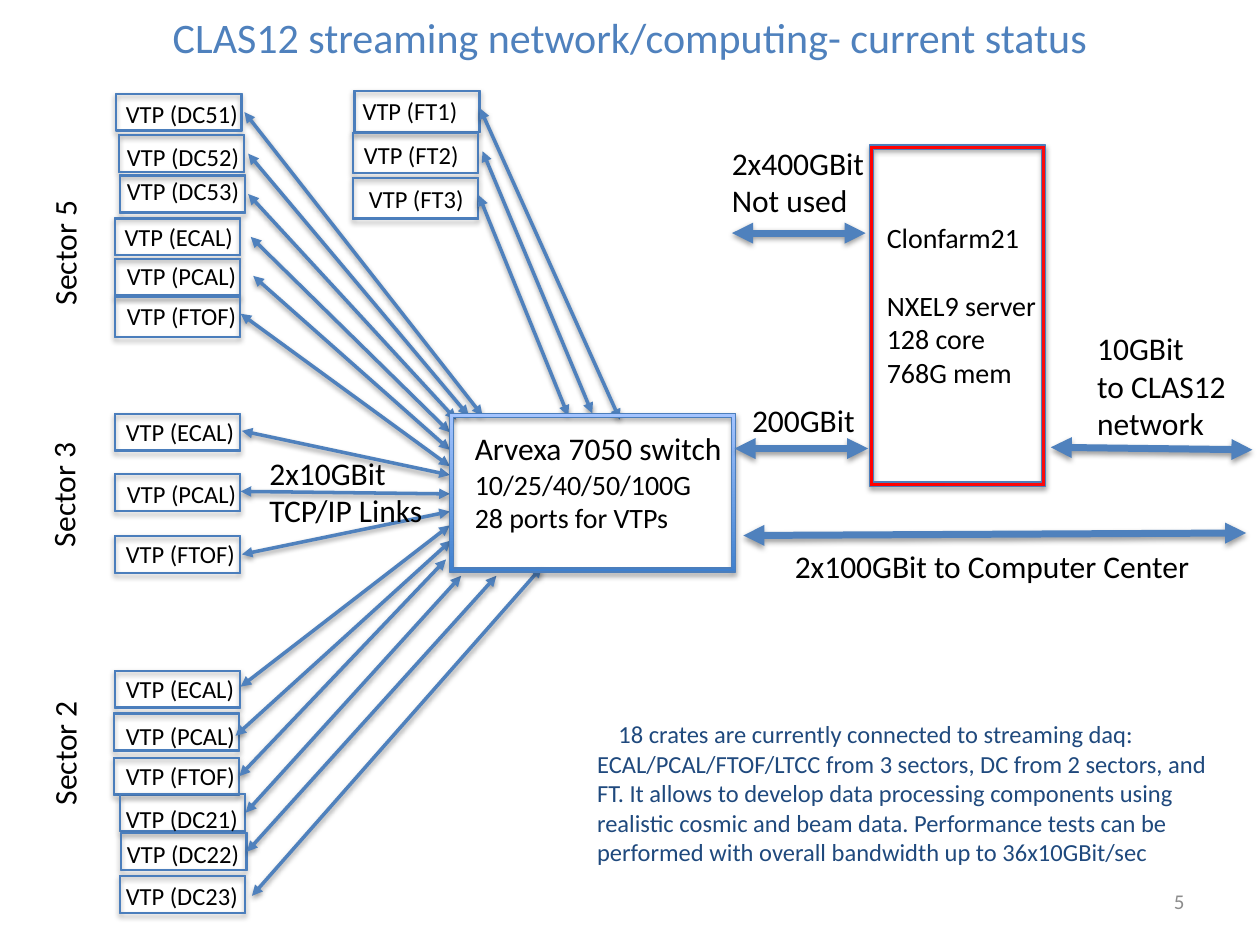
from lxml import etree
from pptx import Presentation
from pptx import util as u
from pptx.dml.color import RGBColor
from pptx.enum import shapes, text
from pptx.oxml import parse_xml
from pptx.oxml.ns import qn

COLORS = {
    "accent": "4F81BD", "outline": "4B7EBC", "deep": "3F80CE", "pale": "A4C4FF",
    "red": "FF0000", "soft_red": "FA0A0D", "black": "000000", "navy": "1F497D",
    "grey": "8C8C8C",
}
A_NS = "http://schemas.openxmlformats.org/drawingml/2006/main"

# label, box (left, top, height), label (left, top), arrow start, arrow end at the switch
CRATES = [
    ("VTP (DC51)", (0.92, 0.74, 0.3), (0.9, 0.74), (1.94, 0.89), (3.83, 3.3)),
    ("VTP (DC52)", (0.94, 1.07, 0.3), (0.91, 1.08), (1.97, 1.22), (3.72, 3.3)),
    ("VTP (DC53)", (0.95, 1.39, 0.3), (0.91, 1.35), (1.97, 1.54), (3.62, 3.33)),
    ("VTP (ECAL)", (0.91, 1.73, 0.3), (0.89, 1.71), (1.99, 1.88), (3.57, 3.43)),
    ("VTP (PCAL)", (0.91, 2.05, 0.3), (0.91, 2.02), (2.01, 2.19), (3.57, 3.57)),
    ("VTP (FTOF)", (0.91, 2.35, 0.33), (0.91, 2.34), (1.91, 2.49), (3.57, 3.7)),
    ("VTP (ECAL)", (0.91, 3.28, 0.3), (0.9, 3.26), (1.92, 3.42), (3.57, 3.77)),
    ("VTP (PCAL)", (0.91, 3.76, 0.3), (0.91, 3.75), (1.91, 3.9), (3.57, 3.92)),
    ("VTP (FTOF)", (0.91, 4.25, 0.3), (0.9, 4.23), (1.92, 4.4), (3.57, 4.06)),
    ("VTP (ECAL)", (0.91, 5.32, 0.3), (0.9, 5.3), (1.91, 5.45), (3.57, 4.17)),
    ("VTP (PCAL)", (0.9, 5.66, 0.3), (0.9, 5.67), (1.87, 5.84), (3.58, 4.29)),
    ("VTP (FTOF)", (0.9, 6.01, 0.3), (0.9, 5.99), (1.9, 6.16), (3.54, 4.44)),
    ("VTP (DC21)", (0.95, 6.3, 0.3), (0.9, 6.33), (1.95, 6.45), (3.66, 4.57)),
    ("VTP (DC22)", (0.96, 6.61, 0.3), (0.91, 6.61), (1.96, 6.76), (3.94, 4.57)),
    ("VTP (DC23)", (0.95, 6.95, 0.3), (0.9, 6.94), (2, 7.11), (4.3, 4.5)),
    ("VTP (FT1)", (2.81, 0.72, 0.33), (2.78, 0.71), (3.81, 0.86), (4.92, 3.33)),
    ("VTP (FT2)", (2.8, 1.05, 0.33), (2.79, 1.06), (3.83, 1.2), (4.7, 3.28)),
    ("VTP (FT3)", (2.8, 1.41, 0.33), (2.83, 1.41), (3.8, 1.55), (4.51, 3.3)),
]
SECTORS = [("Sector 5", -0.01, 1.8), ("Sector 3", -0.02, 3.72), ("Sector 2", -0.01, 5.77)]
LINKS = [
    ((5.9, 4.25), (9.89, 4.23)),
    ((5.83, 3.56), (6.89, 3.56)),
    ((8.34, 3.55), (9.94, 3.57)),
    ((5.81, 1.85), (6.87, 1.85)),
]
LINK_LABELS = [
    (["2x10GBit", "TCP/IP Links"], (2.04, 3.55, 1.43, 0.71)),
    (["2x100GBit to Computer Center"], (6.21, 4.29, 3.37, 0.4)),
    (["200GBit"], (5.87, 3.13, 1.02, 0.4)),
    (["10GBit", "to CLAS12", "network"], (8.61, 2.56, 1.23, 1.01)),
    (["2x400GBit", "Not used"], (5.71, 1.09, 1.26, 0.71)),
]
SUMMARY = (
    "18 crates are currently connected to streaming daq: ECAL/PCAL/FTOF/LTCC from "
    "3 sectors, DC from 2 sectors, and FT. It allows to develop data processing "
    "components using realistic cosmic and beam data. Performance tests can be "
    "performed with overall bandwidth up to 36x10GBit/sec"
)


def color(name):
    return RGBColor.from_string(COLORS[name])


class Diagram:
    """Holds the style and the current slide."""

    font = "Calibri"

    def __init__(self, page):
        self.page = page

    def style(self, span, size, ink):
        formats = {"name": self.font, "size": u.Pt(size)}
        for key, value in formats.items():
            setattr(span.font, key, value)
        span.font.color.rgb = color(ink)

    def shadow(self, item, opacity, distance):
        properties = item._element.spPr
        for old in properties.findall(qn("a:effectLst")):
            properties.remove(old)
        properties.append(parse_xml(
            f'<a:effectLst xmlns:a="{A_NS}"><a:outerShdw blurRad="{u.Pt(3.1)}" '
            f'dist="{u.Pt(distance)}" dir="5400000" rotWithShape="0">'
            f'<a:srgbClr val="{COLORS["black"]}"><a:alpha val="{opacity * 1000}"/>'
            '</a:srgbClr></a:outerShdw></a:effectLst>'))

    def title(self, words, area):
        box = self.page.shapes.title
        box.left, box.top, box.width, box.height = map(u.Inches, area)
        box.text_frame.text = words
        self.style(box.text_frame.paragraphs[0].runs[0], 24, "accent")

    def label(self, lines, area, size=18, ink="black", wrap=False, rotation=0):
        """Adds a text box; a line is a string or a (string, size) pair."""
        box = self.page.shapes.add_textbox(*map(u.Inches, area))
        box.rotation = rotation
        frame = box.text_frame
        frame.word_wrap = wrap
        for index, line in enumerate(lines):
            words, points = (line, size) if isinstance(line, str) else line
            para = frame.paragraphs[0] if index == 0 else frame.add_paragraph()
            span = para.add_run()
            span.text = words
            self.style(span, points, ink)
        return frame

    def frame(self, area, start="deep", end="pale", angle=90):
        box = self.page.shapes.add_shape(shapes.MSO_SHAPE.FRAME, *map(u.Inches, area))
        box.adjustments[0] = 0.025
        box.fill.gradient()
        box.fill.gradient_angle = angle
        for stop, name, place in zip(box.fill.gradient_stops, (start, end), (0, 1)):
            stop.color.rgb = color(name)
            stop.position = place
        box.line.color.rgb = color("outline")
        box.line.width = u.Pt(0.75)
        self.shadow(box, 35, 1.8)

    def arrow(self, start, end, width):
        """Adds a line with an arrowhead at both ends."""
        line = self.page.shapes.add_connector(
            shapes.MSO_CONNECTOR.STRAIGHT, *map(u.Inches, start + end))
        line.line.color.rgb = color("accent")
        line.line.width = u.Pt(width)
        outline = line._element.spPr.find(qn("a:ln"))
        for tag in ("a:headEnd", "a:tailEnd"):
            etree.SubElement(outline, qn(tag), type="triangle")
        self.shadow(line, 38, 1.6)


def main():
    deck = Presentation()
    deck.slide_width, deck.slide_height = u.Inches(10), u.Inches(7.5)
    diagram = Diagram(deck.slides.add_slide(deck.slide_layouts[5]))
    diagram.title("CLAS12 streaming network/computing- current status", (0.5, -0.03, 9, 0.64))

    for name, (left, top, height), place, start, end in CRATES:
        diagram.frame((left, top, 1, height))
        diagram.label([name], place + (1.1, 0.34), size=14, wrap=True)
        diagram.arrow(start, end, 2)
    for name, left, top in SECTORS:
        diagram.label([name], (left, top, 1.04, 0.4), rotation=270)

    diagram.frame((3.57, 3.28, 2.27, 1.26))
    diagram.label([("Arvexa 7050 switch", 18), "10/25/40/50/100G", "28 ports for VTPs"],
                  (3.67, 3.36, 2.3, 0.94), size=16, wrap=True)

    diagram.frame((6.9, 1.15, 1.4, 2.71), "red", "soft_red", 0)
    server = diagram.label(["Clonfarm21", "NXEL9 server", "128 core", "768G mem"],
                           (6.94, 1.7, 1.41, 1.45), size=16)
    server.paragraphs[1].space_before = u.Pt(19.5)

    for start, end in LINKS:
        diagram.arrow(start, end, 4)
    for lines, area in LINK_LABELS:
        diagram.label(lines, area)

    summary = diagram.label([SUMMARY], (4.64, 5.66, 5.25, 1.29), 14, "navy", wrap=True)
    summary.paragraphs[0]._p.get_or_add_pPr().set("indent", str(u.Inches(0.17)))

    number = diagram.label(["5"], (7.17, 6.95, 2.33, 0.4), 12, "grey", wrap=True)
    number.vertical_anchor = text.MSO_ANCHOR.MIDDLE
    number.paragraphs[0].alignment = text.PP_ALIGN.RIGHT

    deck.save("out.pptx")


if __name__ == "__main__":
    main()
